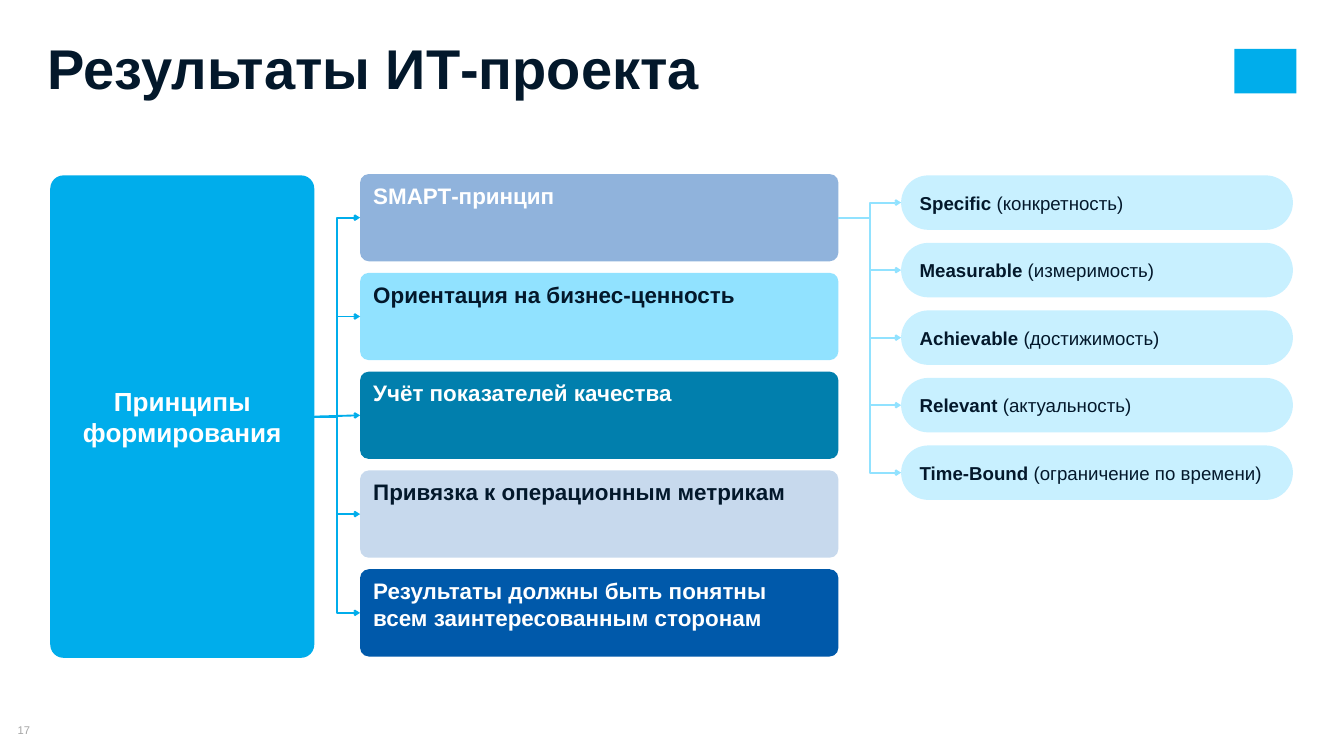
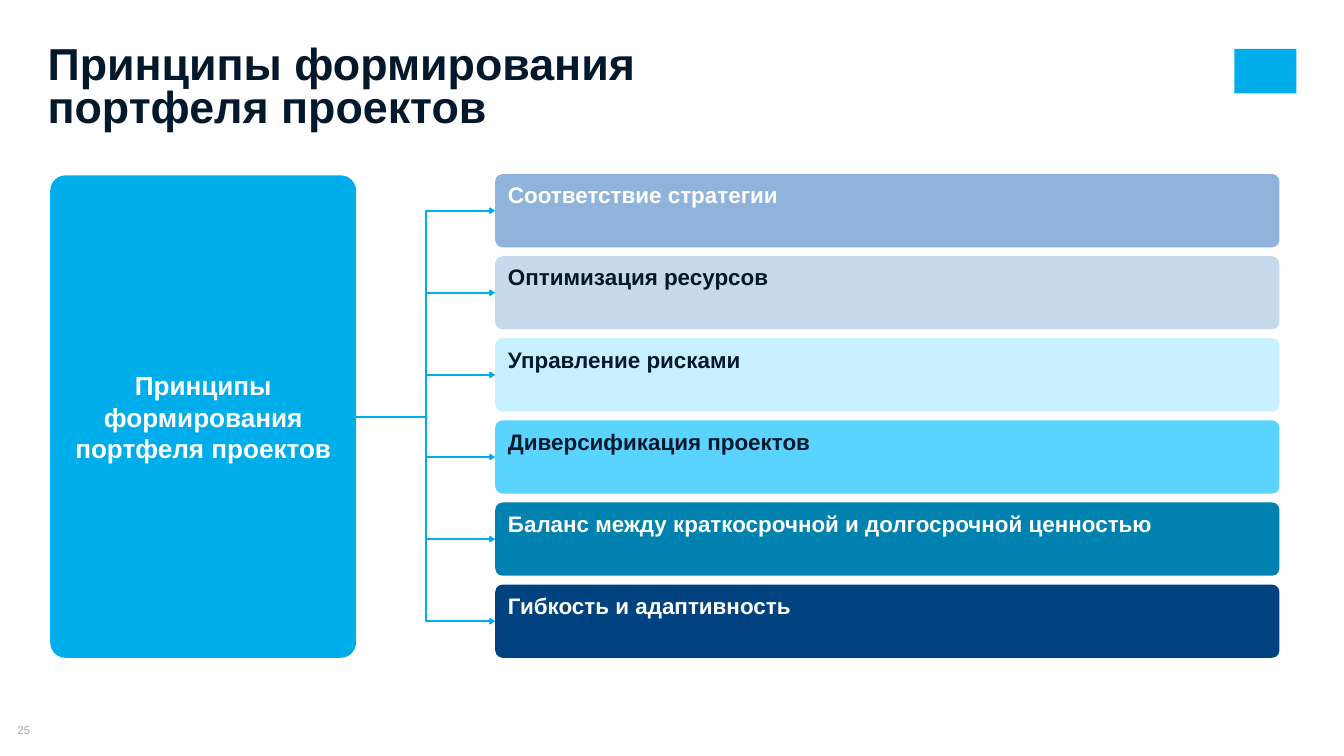
from lxml import etree
from pptx import Presentation
from pptx.dml.color import RGBColor
from pptx.enum.shapes import MSO_CONNECTOR, MSO_SHAPE
from pptx.enum.text import MSO_ANCHOR, MSO_AUTO_SIZE, PP_ALIGN
from pptx.oxml.ns import qn
from pptx.util import Cm, Pt

ROUND, RECT = MSO_SHAPE.ROUNDED_RECTANGLE, MSO_SHAPE.RECTANGLE
ELBOW, STRAIGHT = MSO_CONNECTOR.ELBOW, MSO_CONNECTOR.STRAIGHT
TOP, MIDDLE = MSO_ANCHOR.TOP, MSO_ANCHOR.MIDDLE
LEFT, CENTER = PP_ALIGN.LEFT, PP_ALIGN.CENTER
NO_FIT = MSO_AUTO_SIZE.NONE
LEFT_SITE, RIGHT_SITE = 1, 3

FONT = "Arial"
COLORS = {
    "ink": "03182B", "white": "FFFFFF", "gray": "A6A6A6",
    "cyan": "00ADEB", "sky": "5AD3FF", "aqua": "91E2FF", "ice": "C8F0FF",
    "steel": "90B3DC", "mist": "C7D9ED", "teal": "017FAD",
    "sea": "0082B0", "blue": "0059AA", "navy": "004380",
}

# Boxes are (left, top, width, height) in cm
LOGO = (46.66, 1.85, 2.34, 1.68)
NUMBER = (0, 27.36, 1.8, 0.5)
ROW_PAD = (0.4, 0.2, 0.25, 0.13)
PILL_PAD = (0.4, 0.3, 0.4, 0.3)
HUB_PAD = (0.25, 0.13, 0.25, 0.13)
NO_PAD = (0, 0, 0, 0)


def rgb(name):
    return RGBColor.from_string(COLORS[name])


def place(shape, box):
    shape.left, shape.top, shape.width, shape.height = map(Cm, box)


def write(frame, paras, size, color, pad, anchor=MIDDLE, align=LEFT, space=None):
    """Fill a frame; each paragraph is a list of (text, bold) runs."""
    frame.word_wrap = True
    frame.auto_size = NO_FIT
    frame.vertical_anchor = anchor
    (frame.margin_left, frame.margin_top,
     frame.margin_right, frame.margin_bottom) = map(Cm, pad)
    for i, runs in enumerate(paras):
        para = frame.add_paragraph() if i else frame.paragraphs[0]
        para.alignment = align
        para.line_spacing = space
        for text, bold in runs:
            for j, line in enumerate(text.split("\n")):
                if j:
                    para.add_line_break()
                run = para.add_run()
                run.text = line
                font = run.font
                font.name, font.size, font.bold = FONT, Pt(size), bold
                font.color.rgb = rgb(color)


def block(slide, box, fill, kind=ROUND, bend=None):
    shape = slide.shapes.add_shape(kind, *map(Cm, box))
    shape.shadow.inherit = False
    shape.fill.solid()
    shape.fill.fore_color.rgb = rgb(fill)
    shape.line.fill.background()
    if bend is not None:
        shape.adjustments[0] = bend
    return shape


def base(deck, title, size, box, number):
    """Add a slide with the shared title, corner mark and page number."""
    slide = deck.slides.add_slide(deck.slide_layouts[5])
    block(slide, LOGO, "cyan", RECT)
    page = slide.shapes.add_textbox(*map(Cm, NUMBER))
    write(page.text_frame, [[(number, False)]], 12, "gray", NO_PAD, align=CENTER)
    head = slide.shapes.title
    place(head, box)
    write(head.text_frame, [[(title, True)]], size, "ink", NO_PAD, TOP, space=0.8)
    return slide


def hub(slide, box, lines):
    shape = block(slide, box, "cyan", bend=0.05)
    paras = [[(line, True)] for line in lines]
    write(shape.text_frame, paras, 28, "white", HUB_PAD, align=CENTER)
    return shape


def stack(box, high, count):
    """Spread boxes of one height evenly from top to bottom of the box."""
    left, top, width, full = box
    step = (full - high) / (count - 1)
    return [(left, top + i * step, width, high) for i in range(count)]


def bars(slide, box, high, items):
    shapes = []
    for spot, (text, fill, ink) in zip(stack(box, high, len(items)), items):
        shape = block(slide, spot, fill, bend=0.1)
        write(shape.text_frame, [[(text, True)]], 24, ink, ROW_PAD, TOP)
        shapes.append(shape)
    return shapes


def pills(slide, box, high, items):
    shapes = []
    for spot, (term, note) in zip(stack(box, high, len(items)), items):
        shape = block(slide, spot, "ice", bend=0.5)
        runs = [(term + " ", True), (f"({note})", False)]
        write(shape.text_frame, [runs], 20, "ink", PILL_PAD)
        shapes.append(shape)
    return shapes


def branch(slide, root, leaves, color):
    """Draw an arrow from the root to each leaf."""
    mid = root.top + root.height // 2
    for leaf in leaves:
        level = abs(leaf.top + leaf.height // 2 - mid) < Cm(0.1)
        kind = STRAIGHT if level else ELBOW
        link = slide.shapes.add_connector(kind, 0, 0, 0, 0)
        link.begin_connect(root, RIGHT_SITE)
        link.end_connect(leaf, LEFT_SITE)
        link.line.color.rgb = rgb(color)
        link.line.width = Pt(2)
        props = link.element.spPr
        etree.SubElement(props.find(qn("a:ln")), qn("a:tailEnd"), type="arrow")
        etree.SubElement(props, qn("a:effectLst"))


def results(deck):
    slide = base(deck, "Результаты ИТ-проекта", 60, (1.8, 1.75, 40.03, 2.06), "17")
    root = hub(slide, (1.9, 6.63, 9.98, 18.24), ["Принципы формирования"])
    rules = bars(slide, (13.61, 6.58, 18.08, 18.24), 3.3, [
        ("ЅМАРТ-принцип", "steel", "white"),
        ("Ориентация на бизнес-ценность", "aqua", "ink"),
        ("Учёт показателей качества", "teal", "white"),
        ("Привязка к операционным метрикам", "mist", "ink"),
        ("Результаты должны быть понятны\nвсем заинтересованным сторонам",
         "blue", "white"),
    ])
    branch(slide, root, rules, "cyan")
    traits = pills(slide, (34.06, 6.63, 14.81, 12.27), 2.06, [
        ("Specific", "конкретность"),
        ("Measurable", "измеримость"),
        ("Achievable", "достижимость"),
        ("Relevant", "актуальность"),
        ("Time-Bound", "ограничение по времени"),
    ])
    branch(slide, rules[0], traits, "aqua")


def portfolio(deck):
    slide = base(deck, "Принципы формирования портфеля проектов", 48,
                 (1.8, 1.75, 24.13, 3.45), "25")
    root = hub(slide, (1.9, 6.63, 11.56, 18.24),
               ["Принципы формирования", "портфеля проектов"])
    rules = bars(slide, (18.72, 6.58, 29.64, 18.29), 2.77, [
        ("Соответствие стратегии", "steel", "white"),
        ("Оптимизация ресурсов", "mist", "ink"),
        ("Управление рисками", "ice", "ink"),
        ("Диверсификация проектов", "sky", "ink"),
        ("Баланс между краткосрочной и долгосрочной ценностью", "sea", "white"),
        ("Гибкость и адаптивность", "navy", "white"),
    ])
    branch(slide, root, rules, "cyan")


def main():
    deck = Presentation()
    deck.slide_width, deck.slide_height = Cm(50.8), Cm(28.58)
    results(deck)
    portfolio(deck)
    deck.save("out.pptx")


if __name__ == "__main__":
    main()
